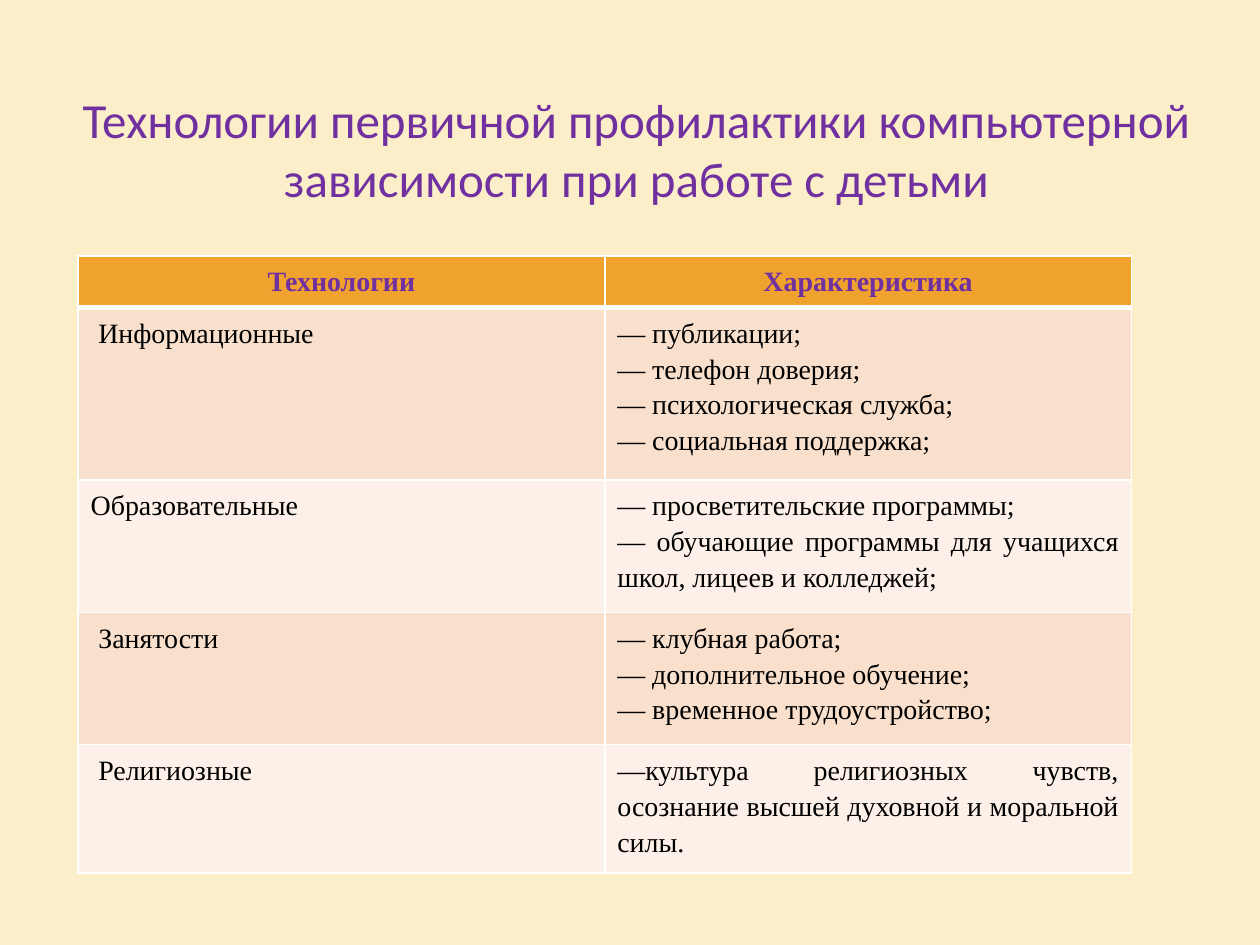
from lxml.etree import SubElement
from pptx import Presentation
from pptx.dml.color import RGBColor
from pptx.enum.text import MSO_ANCHOR, PP_ALIGN as Align
from pptx.oxml.ns import qn
from pptx.util import Inches, Pt

# Content
TITLE = "Технологии первичной профилактики компьютерной зависимости при работе с детьми"
HEADERS = ["Технологии", "Характеристика"]
# Technology, extra left indent in inches, characteristics
TECHNOLOGIES = [
    ("Информационные", 0.06, ["— публикации;", "— телефон доверия;",
                              "— психологическая служба;", "— социальная поддержка;"]),
    ("Образовательные", 0, ["— просветительские программы;",
                            "— обучающие программы для учащихся школ, лицеев и колледжей;"]),
    ("Занятости", 0.06, ["— клубная работа;", "— дополнительное обучение;",
                         "— временное трудоустройство;"]),
    ("Религиозные", 0.06, ["—культура религиозных чувств, осознание высшей "
                           "духовной и моральной силы."]),
]
ROW_HEIGHTS = [0.41, 1.37, 1.05, 1.05, 0.95]
COL_WIDTH = 4.18

CREAM = RGBColor(0xFB, 0xEE, 0xC9)
PURPLE = RGBColor(0x70, 0x30, 0xA0)
ORANGE = RGBColor(0xF0, 0xA2, 0x2E)
BANDS = [RGBColor(0xF9, 0xE0, 0xCD), RGBColor(0xFC, 0xF0, 0xE8)]
BLACK = RGBColor(0, 0, 0)
WHITE = RGBColor(0xFF, 0xFF, 0xFF)


def add_run(p, text, font, size, color, bold=False):
    r = p.add_run()
    r.text = text
    r.font.name = font
    r.font.size = Pt(size)
    r.font.color.rgb = color
    r.font.bold = bold


def set_borders(cell, top, bottom):
    tc_pr = cell._tc.get_or_add_tcPr()
    for side, width in (("L", 1), ("R", 1), ("T", top), ("B", bottom)):
        ln = SubElement(tc_pr, qn(f"a:ln{side}"), w=str(Pt(width)))
        fill = SubElement(ln, qn("a:solidFill"))
        SubElement(fill, qn("a:srgbClr"), val=str(WHITE))


def fill_cell(cell, lines, align, fill, color=BLACK, bold=False, top=1, bottom=1):
    set_borders(cell, top, bottom)
    cell.fill.solid()
    cell.fill.fore_color.rgb = fill
    tf = cell.text_frame
    for i, line in enumerate(lines):
        p = tf.add_paragraph() if i else tf.paragraphs[0]
        p.alignment = align
        p.line_spacing = 1.15
        add_run(p, line, "Times New Roman", 16, color, bold)


prs = Presentation()
prs.slide_width, prs.slide_height = Inches(10), Inches(7.5)
s = prs.slides.add_slide(prs.slide_layouts[6])
s.background.fill.solid()
s.background.fill.fore_color.rgb = CREAM

# Title
sp = s.shapes.add_textbox(Inches(0.55), Inches(0.55), Inches(9), Inches(1.25))
tf = sp.text_frame
tf.word_wrap = True
tf.vertical_anchor = MSO_ANCHOR.MIDDLE
p = tf.paragraphs[0]
p.alignment = Align.CENTER
add_run(p, TITLE, "Calibri", 28, PURPLE)

# Table grid
table = s.shapes.add_table(len(ROW_HEIGHTS), len(HEADERS), Inches(0.62), Inches(2.03),
                           Inches(COL_WIDTH * len(HEADERS)), Inches(sum(ROW_HEIGHTS))).table
for col in table.columns:
    col.width = Inches(COL_WIDTH)
for row, height in zip(table.rows, ROW_HEIGHTS):
    row.height = Inches(height)

# Header row
for c, header in enumerate(HEADERS):
    fill_cell(table.cell(0, c), [header], Align.CENTER, ORANGE, PURPLE, bold=True, bottom=3)

# Body rows
for i, (name, indent, features) in enumerate(TECHNOLOGIES):
    band = BANDS[i % 2]
    top = 1 if i else 3
    name_cell, feature_cell = table.cell(i + 1, 0), table.cell(i + 1, 1)
    fill_cell(name_cell, [name], Align.LEFT, band, top=top)
    name_cell.margin_left = Inches(0.1 + indent)
    fill_cell(feature_cell, features, Align.JUSTIFY, band, top=top)

prs.save("out.pptx")
